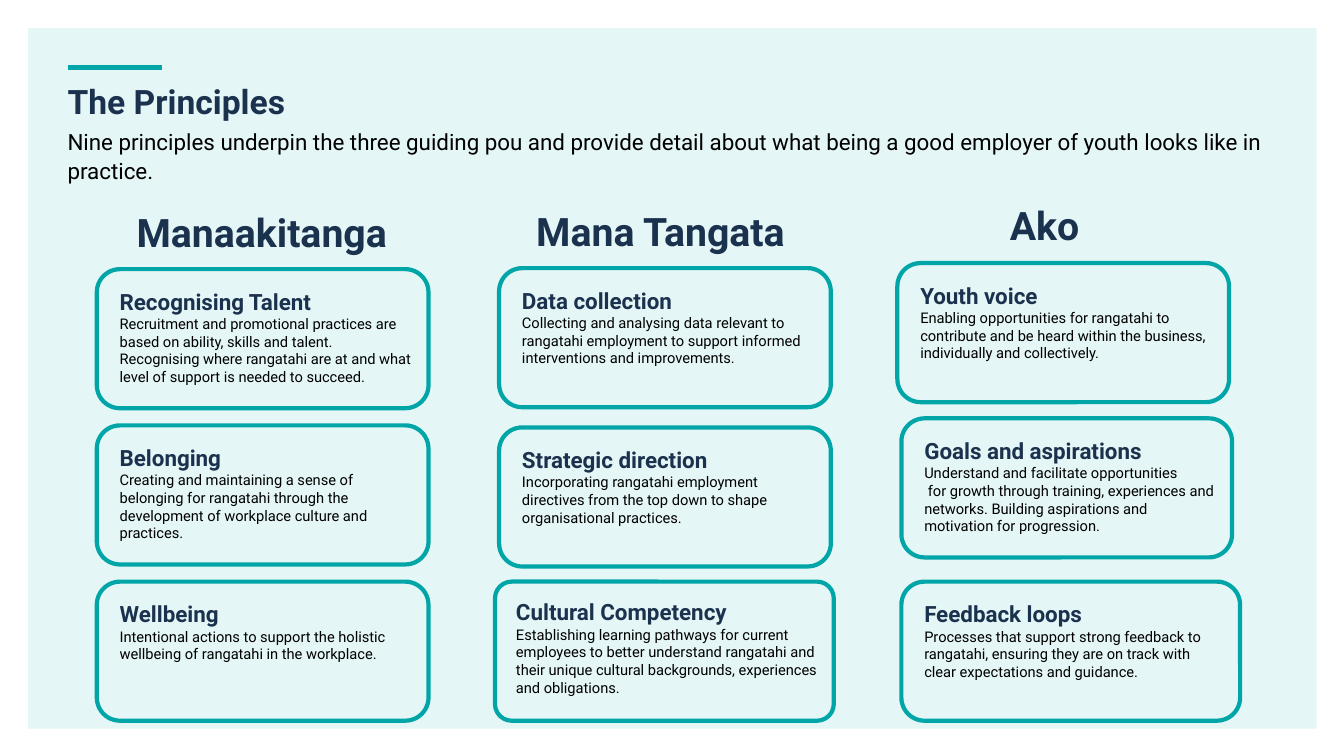
"""Build the slide of nine principles grouped under three pou."""
from lxml import etree
from pptx import Presentation
from pptx.dml.color import RGBColor
from pptx.enum import shapes, text
from pptx.oxml.ns import qn
from pptx.util import Inches, Pt

NAVY = RGBColor(0x1B, 0x32, 0x4F)
TEAL = RGBColor(0x00, 0xA6, 0xA7)
PALE = RGBColor(0xE5, 0xF6, 0xF6)
BLACK = RGBColor(0, 0, 0)
FONT = "Roboto"
CARD_HEIGHT = 1.38

POU = [
    ("Manaakitanga", (1.14, 1.97, 2.91), [
        ((0.96, 2.67, 3.29), "Recognising Talent",
         "Recruitment and promotional practices are based on ability, skills and talent. "
         "Recognising where rangatahi are at and what level of support is needed to succeed."),
        ((0.96, 4.22, 3.29), "Belonging",
         "Creating and maintaining a sense of belonging for rangatahi through the "
         "development of workplace culture and practices."),
        ((0.96, 5.77, 3.29), "Wellbeing",
         "Intentional actions to support the holistic wellbeing of rangatahi in the workplace."),
    ]),
    ("Mana Tangata", (4.51, 1.96, 4.08), [
        ((4.95, 2.66, 3.29), "Data collection",
         "Collecting and analysing data relevant to rangatahi employment to support "
         "informed interventions and improvements."),
        ((4.95, 4.24, 3.29), "Strategic direction",
         "Incorporating rangatahi employment directives from the top down to shape\n"
         "organisational practices."),
        ((4.91, 5.77, 3.36), "Cultural Competency",
         "Establishing learning pathways for current employees to better understand rangatahi "
         "and their unique cultural backgrounds, experiences and obligations."),
    ]),
    ("Ako", (7.53, 1.9, 5.66), [
        ((8.9, 2.61, 3.29), "Youth voice",
         "Enabling opportunities for rangatahi to contribute and be heard within the business, "
         "individually and collectively."),
        ((8.94, 4.15, 3.28), "Goals and aspirations",
         "Understand and facilitate opportunities\n for growth through training, experiences "
         "and networks. Building aspirations and motivation for progression."),
        ((8.94, 5.77, 3.36), "Feedback loops",
         "Processes that support strong feedback to rangatahi, ensuring they are on track "
         "with clear expectations and guidance."),
    ]),
]


def write(paragraph, wording, size, color, bold=False):
    """Add formatted runs, with a line break at each newline."""
    for index, line in enumerate(wording.split("\n")):
        if index:
            paragraph.add_line_break()
        run = paragraph.add_run()
        run.text = line
        run.font.name = FONT
        run.font.size = Pt(size)
        run.font.bold = bold
        run.font.color.rgb = color


def set_frame(frame, left, top, right, bottom):
    """Set top-anchored wrapping text with the given margins."""
    frame.word_wrap = True
    frame.auto_size = text.MSO_AUTO_SIZE.NONE
    frame.vertical_anchor = text.MSO_ANCHOR.TOP
    frame.margin_left, frame.margin_top = Inches(left), Inches(top)
    frame.margin_right, frame.margin_bottom = Inches(right), Inches(bottom)


def fill_placeholder(shape, box, wording, size, color, spacing, bold=False):
    """Move a placeholder and write its text without a bullet."""
    shape.left, shape.top, shape.width, shape.height = map(Inches, box)
    set_frame(shape.text_frame, 0, 0, 0, 0)
    paragraph = shape.text_frame.paragraphs[0]
    properties = paragraph._p.get_or_add_pPr()
    properties.set("marL", "0")
    properties.set("indent", "0")
    etree.SubElement(properties, qn("a:buNone"))
    paragraph.alignment = text.PP_ALIGN.LEFT
    paragraph.line_spacing = spacing
    paragraph.space_before = Pt(0)
    write(paragraph, wording, size, color, bold)


def add_panel(slide):
    """Add the pale panel behind everything else."""
    panel = slide.shapes.add_shape(shapes.MSO_SHAPE.RECTANGLE, Inches(0.28), Inches(0.28),
                                   Inches(12.78), Inches(6.95))
    panel.shadow.inherit = False
    panel.fill.solid()
    panel.fill.fore_color.rgb = PALE
    panel.line.fill.background()
    slide.shapes.element.insert(2, panel.element)


def add_accent(slide):
    """Add the short teal line above the title."""
    accent = slide.shapes.add_connector(shapes.MSO_CONNECTOR.STRAIGHT, Inches(0.67),
                                        Inches(0.67), Inches(1.61), Inches(0.67))
    accent.line.color.rgb = TEAL
    accent.line.width = Pt(3)
    etree.SubElement(accent.element.spPr, qn("a:effectLst"))


def add_heading(slide, name, place):
    """Add the centred name of a pou."""
    left, top, width = map(Inches, place)
    box = slide.shapes.add_textbox(left, top, width, Inches(0.59))
    set_frame(box.text_frame, 0.1, 0.05, 0.1, 0.05)
    paragraph = box.text_frame.paragraphs[0]
    paragraph.alignment = text.PP_ALIGN.CENTER
    paragraph.line_spacing = 1.1
    write(paragraph, name, 28, NAVY, bold=True)


def add_card(slide, place, name, detail):
    """Add a rounded card with a principle and its description."""
    left, top, width = map(Inches, place)
    card = slide.shapes.add_shape(shapes.MSO_SHAPE.ROUNDED_RECTANGLE, left, top, width,
                                  Inches(CARD_HEIGHT))
    if name == "Cultural Competency":
        card.adjustments[0] = 0.12
    card.shadow.inherit = False
    card.fill.background()
    card.line.color.rgb = TEAL
    card.line.width = Pt(3)
    frame = card.text_frame
    set_frame(frame, 0.16, 0.12, 0.08, 0.12)
    title, description = frame.paragraphs[0], frame.add_paragraph()
    title.alignment = description.alignment = text.PP_ALIGN.LEFT
    write(title, name, 16, NAVY, bold=True)
    write(description, detail, 10.5, BLACK)


def main():
    """Build and save the presentation."""
    presentation = Presentation()
    presentation.slide_width, presentation.slide_height = Inches(13.33), Inches(7.5)
    slide = presentation.slides.add_slide(presentation.slide_layouts[1])
    add_panel(slide)
    add_accent(slide)
    fill_placeholder(slide.shapes.title, (0.67, 0.85, 11.76, 0.54), "The Principles",
                     24, NAVY, 0.9, bold=True)
    fill_placeholder(slide.placeholders[1], (0.67, 1.24, 12.07, 0.73),
                     "Nine principles underpin the three guiding pou and provide detail about "
                     "what being a good employer of youth looks like in practice.",
                     16, BLACK, 1.1)
    for name, place, principles in POU:
        add_heading(slide, name, place)
        for principle in principles:
            add_card(slide, *principle)
    presentation.save("out.pptx")


if __name__ == "__main__":
    main()
